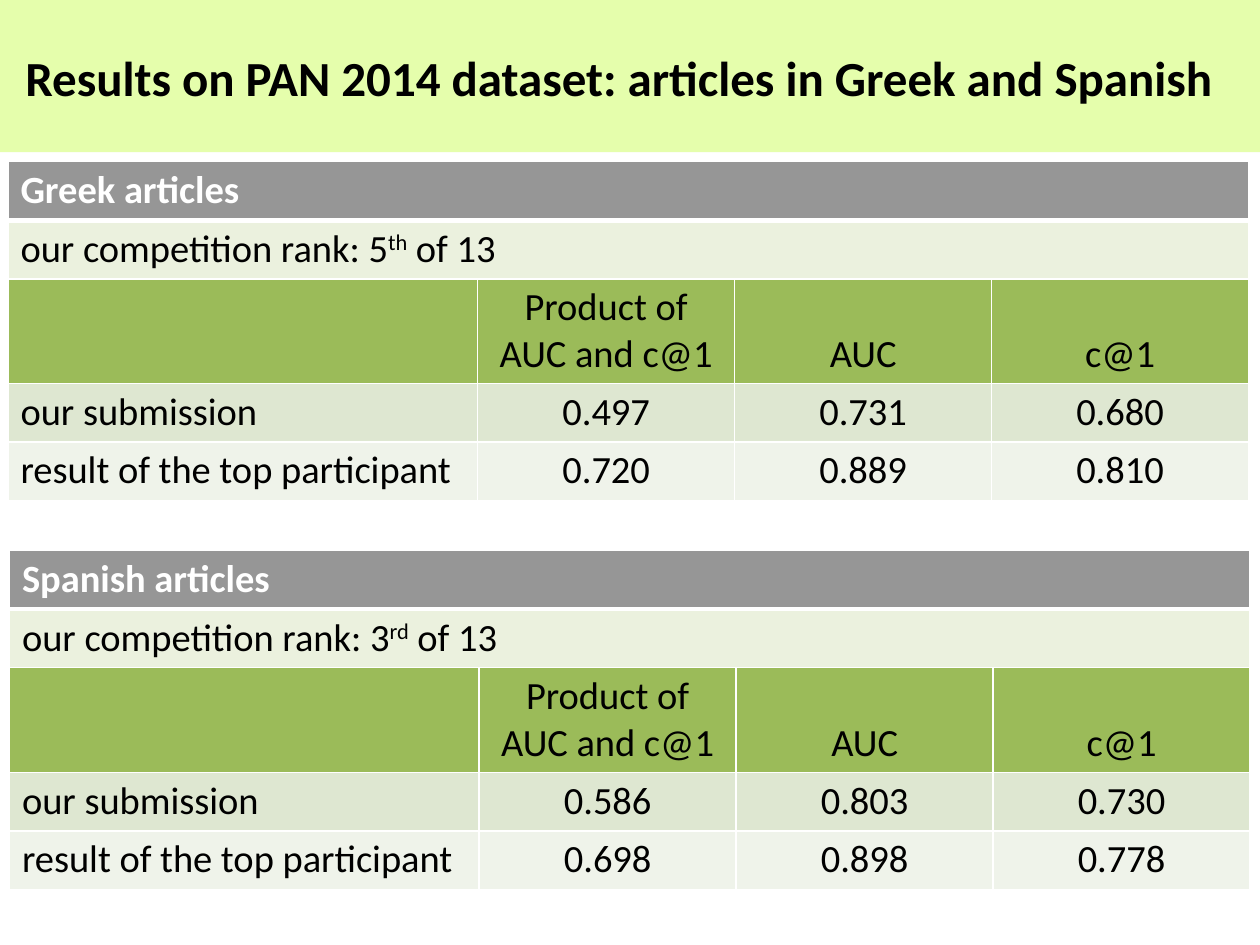
from lxml import etree
from pptx import Presentation
from pptx.dml.color import RGBColor
from pptx.enum import shapes, text
from pptx.oxml.ns import qn
from pptx.util import Cm, Pt

WHITE = RGBColor(0xFF, 0xFF, 0xFF)
BLACK = RGBColor(0, 0, 0)
LIME = RGBColor(0xE5, 0xFE, 0xAC)
GREY = RGBColor(0x96, 0x96, 0x96)
GREEN = RGBColor(0x9B, 0xBB, 0x59)
RANK_FILL = RGBColor(0xEB, 0xF1, 0xDE)
OURS_FILL = RGBColor(0xDE, 0xE7, 0xD1)
TOP_FILL = RGBColor(0xEF, 0xF3, 0xEA)
ROW_FILLS = [GREY, RANK_FILL, GREEN, OURS_FILL, TOP_FILL]

FONT = "Calibri"
COL_WIDTHS = [Cm(9.47)] + [Cm(5.18)] * 3
ROW_HEIGHTS = [Cm(1.18), Cm(1.18), Cm(2.1), Cm(1.18), Cm(1.18)]
HEADINGS = ["", "Product of\nAUC and c@1", "AUC", "c@1"]


def set_font(p, size, color, bold=False):
    f = p.font
    f.name, f.size, f.bold = FONT, Pt(size), bold
    f.color.rgb = color


def set_borders(cell, bottom=1, top=1):
    """White lines on all four sides, widths in points."""
    tcPr = cell._tc.get_or_add_tcPr()
    sides = [("a:lnL", 1), ("a:lnR", 1), ("a:lnT", top), ("a:lnB", bottom)]
    for i, (tag, width) in enumerate(sides):
        ln = etree.Element(qn(tag), w=str(Pt(width)))
        fill = etree.SubElement(ln, qn("a:solidFill"))
        etree.SubElement(fill, qn("a:srgbClr"), val=str(WHITE))
        tcPr.insert(i, ln)


def add_title(s, title):
    # Coloured band, placed behind the title
    band = s.shapes.add_shape(shapes.MSO_SHAPE.RECTANGLE, 0, 0, Cm(25.4), Cm(3.07))
    band.shadow.inherit = False
    band.fill.solid()
    band.fill.fore_color.rgb = LIME
    band.line.fill.background()

    sp = s.shapes.title
    sp.element.addprevious(band.element)
    sp.left, sp.top, sp.width, sp.height = Cm(0.03), Cm(0.82), Cm(25.37), Cm(1.45)
    tf = sp.text_frame
    tf.text = title
    tf.word_wrap = True
    tf.auto_size = text.MSO_AUTO_SIZE.NONE
    tf.vertical_anchor = text.MSO_ANCHOR.MIDDLE
    tf.margin_left = Cm(0.48)
    p = tf.paragraphs[0]
    p.alignment = text.PP_ALIGN.LEFT
    set_font(p, 28, BLACK, bold=True)


def fill_rank(cell, rank, suffix):
    p = cell.text_frame.paragraphs[0]
    for part in (f"our competition rank: {rank}", suffix, " of 13"):
        r = p.add_run()
        r.text = part
        if part == suffix:
            r.font._element.set("baseline", "30000")


def add_results(s, left, top, language, rank, suffix, ours, best):
    rows = [
        [f"{language} articles"],
        [],
        HEADINGS,
        ["our submission"] + ours,
        ["result of the top participant"] + best,
    ]
    tbl = s.shapes.add_table(len(rows), len(COL_WIDTHS), left, top,
                             sum(COL_WIDTHS), sum(ROW_HEIGHTS)).table
    for col, width in zip(tbl.columns, COL_WIDTHS):
        col.width = width
    for row, height in zip(tbl.rows, ROW_HEIGHTS):
        row.height = height

    # Wording
    for i, values in enumerate(rows):
        for j, value in enumerate(values):
            tbl.cell(i, j).text = value
    fill_rank(tbl.cell(1, 0), rank, suffix)
    for i in (0, 1):
        tbl.cell(i, 0).merge(tbl.cell(i, len(COL_WIDTHS) - 1))

    # Look
    for i, color in enumerate(ROW_FILLS):
        for j in range(len(COL_WIDTHS)):
            cell = tbl.cell(i, j)
            cell.fill.solid()
            cell.fill.fore_color.rgb = color
            cell.margin_top = cell.margin_bottom = Cm(0.11)
            set_borders(cell, bottom=3 if i == 0 else 1, top=3 if i == 1 else 1)
            if i == 2:
                cell.vertical_anchor = text.MSO_ANCHOR.BOTTOM
            for p in cell.text_frame.paragraphs:
                p.alignment = text.PP_ALIGN.CENTER if j else text.PP_ALIGN.LEFT
                set_font(p, 22, BLACK if i else WHITE, bold=i == 0)


def main():
    prs = Presentation()
    prs.slide_width, prs.slide_height = Cm(25.4), Cm(19.05)
    s = prs.slides.add_slide(prs.slide_layouts[5])
    add_title(s, "Results on PAN 2014 dataset: articles in Greek and Spanish")
    add_results(s, Cm(0.16), Cm(3.26), "Greek", 5, "th",
                ["0.497", "0.731", "0.680"], ["0.720", "0.889", "0.810"])
    add_results(s, Cm(0.19), Cm(11.1), "Spanish", 3, "rd",
                ["0.586", "0.803", "0.730"], ["0.698", "0.898", "0.778"])
    prs.save("out.pptx")


if __name__ == "__main__":
    main()
